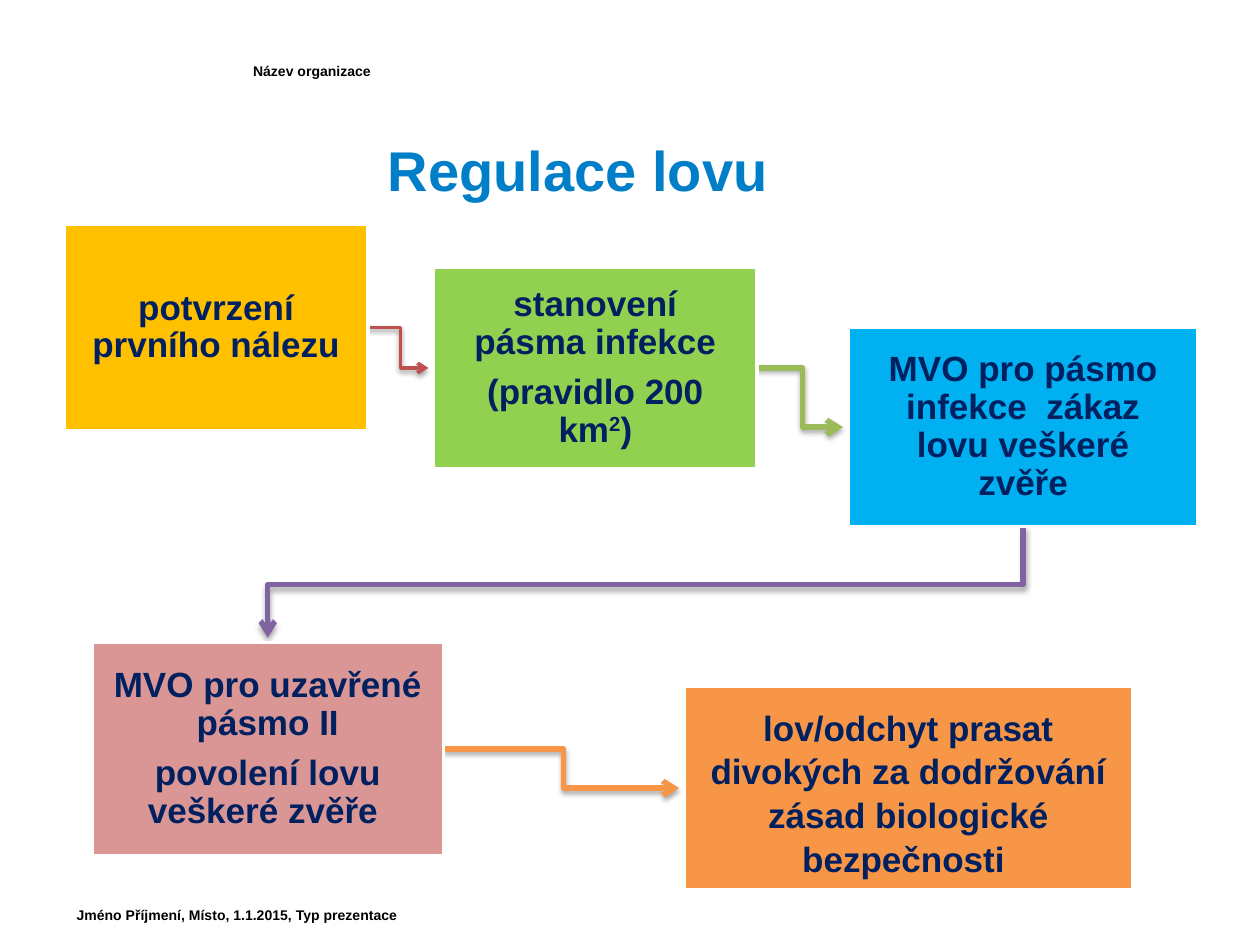
from dataclasses import dataclass
from lxml import etree
from pptx import Presentation
from pptx import util as u
from pptx.dml.color import RGBColor
from pptx.enum import shapes, text
from pptx.oxml.ns import qn


@dataclass(frozen=True)
class Theme:
    font: str = "Arial"
    black: str = "000000"
    white: str = "FFFFFF"
    blue: str = "007EC7"
    navy: str = "002060"
    small: int = 8
    body: int = 20
    large: int = 32


@dataclass(frozen=True)
class Label:
    words: str
    left: float
    top: float
    width: float
    height: float
    size: int
    color: str
    indent: float = 0


@dataclass(frozen=True)
class Step:
    lines: tuple[str, ...]  # "^" stands around superscript text
    left: float
    top: float
    width: float
    height: float
    fill: str
    pad: float = 0.16
    pitch: float = 0.9
    drop: float = 0  # extra inset above the text

    @property
    def middle(self) -> tuple[float, float]:
        return self.left + self.width / 2, self.top + self.height / 2


@dataclass(frozen=True)
class Link:
    start: int
    end: int
    color: str
    weight: float = 3
    alpha: int = 35
    down: bool = False


THEME = Theme()
GAP = 0.04
SHIFT = 0.02

LABELS = (
    Label("Název organizace", 1.91, 0.44, 7.59, 0.24, THEME.small, THEME.black),
    Label("Jméno Příjmení, Místo, 1.1.2015, Typ prezentace",
          0.51, 7.14, 9, 0.24, THEME.small, THEME.black),
    Label("Regulace lovu", 0.51, 0.99, 8.99, 0.71, THEME.large, THEME.blue, 2.47),
)
STEPS = (
    Step(("potvrzení prvního nálezu",), 0.51, 1.78, 2.41, 1.64, "FFC000"),
    Step(("stanovení pásma infekce", "(pravidlo 200 km^2^)"),
         3.44, 2.12, 2.57, 1.6, "92D050"),
    Step(("MVO pro pásmo infekce  zákaz lovu veškeré zvěře",),
         6.73, 2.6, 2.78, 1.58, "00B0F0"),
    Step(("MVO pro uzavřené pásmo II", "povolení lovu veškeré zvěře "),
         0.73, 5.1, 2.79, 1.69, "D99694"),
    Step(("lov/odchyt prasat divokých za dodržování zásad biologické bezpečnosti ",),
         5.43, 5.45, 3.56, 1.61, "F79646", 0.11, 1.04, 0.06),
)
LINKS = (
    Link(0, 1, "C0504D", 2, 38),
    Link(1, 2, "9BBB59"),
    Link(2, 3, "8064A2", down=True),
    Link(3, 4, "F79646"),
)


def style(font, size: int, color: str) -> None:
    for name, value in {"name": THEME.font, "size": u.Pt(size), "bold": True}.items():
        setattr(font, name, value)
    font.color.rgb = RGBColor.from_string(color)


def place(item: Label | Step) -> list[u.Inches]:
    return [u.Inches(n) for n in (item.left, item.top, item.width, item.height)]


def add_label(slide, label: Label) -> None:
    frame = slide.shapes.add_textbox(*place(label)).text_frame
    frame.word_wrap = True
    frame.vertical_anchor = text.MSO_ANCHOR.MIDDLE
    para = frame.paragraphs[0]
    if label.indent:
        para._p.get_or_add_pPr().set("marL", str(u.Inches(label.indent)))
    run = para.add_run()
    run.text = label.words
    style(run.font, label.size, label.color)


def add_step(slide, step: Step) -> None:
    box = slide.shapes.add_shape(shapes.MSO_SHAPE.RECTANGLE, *place(step))
    box.shadow.inherit = False
    box.fill.solid()
    box.fill.fore_color.rgb = RGBColor.from_string(step.fill)
    box.line.color.rgb = RGBColor.from_string(THEME.white)
    box.line.width = u.Pt(2)
    frame = box.text_frame
    pad = u.Inches(step.pad)
    look = {"word_wrap": True, "vertical_anchor": text.MSO_ANCHOR.MIDDLE,
            "margin_left": pad, "margin_right": pad, "margin_bottom": pad,
            "margin_top": u.Inches(step.pad + step.drop)}
    for name, value in look.items():
        setattr(frame, name, value)
    for i, line in enumerate(step.lines):
        para = frame.add_paragraph() if i else frame.paragraphs[0]
        para.alignment = text.PP_ALIGN.CENTER
        para.line_spacing = step.pitch
        if i:
            para.space_before = u.Pt(7)
        for j, part in enumerate(line.split("^")):
            run = para.add_run()
            run.text = part
            style(run.font, THEME.body, THEME.navy)
            if j % 2:
                run.font._element.set("baseline", "30000")


def route(link: Link) -> list[tuple[float, float]]:
    """Points of a two-bend path from one step's side to just before the next."""
    a, b = STEPS[link.start], STEPS[link.end]
    (ax, ay), (bx, by) = a.middle, b.middle
    if link.down:
        ay, by = a.top + a.height, b.top - GAP
        mid = (ay + by) / 2 + SHIFT
        return [(ax, ay), (ax, mid), (bx, mid), (bx, by)]
    ax, bx = a.left + a.width, b.left - GAP
    mid = (ax + bx) / 2 + SHIFT
    return [(ax, ay), (mid, ay), (mid, by), (bx, by)]


def add_link(slide, link: Link) -> None:
    first, *rest = [(u.Inches(x), u.Inches(y)) for x, y in route(link)]
    pen = slide.shapes.build_freeform(*first)
    pen.add_line_segments(rest, close=False)
    path = pen.convert_to_shape()
    path.fill.background()
    path.line.color.rgb = RGBColor.from_string(link.color)
    path.line.width = u.Pt(link.weight)
    path.shadow.inherit = False
    props = path._element.spPr
    etree.SubElement(props.find(qn("a:ln")), qn("a:tailEnd"), type="arrow")
    shade = etree.SubElement(
        props.find(qn("a:effectLst")), qn("a:outerShdw"), blurRad=str(u.Pt(3.1)),
        dist=str(u.Pt(1.8)), dir="5400000", rotWithShape="0")
    tint = etree.SubElement(shade, qn("a:srgbClr"), val=THEME.black)
    etree.SubElement(tint, qn("a:alpha"), val=str(link.alpha * 1000))


def main() -> None:
    deck = Presentation()
    deck.slide_width, deck.slide_height = u.Inches(10), u.Inches(7.5)
    slide = deck.slides.add_slide(deck.slide_layouts[6])
    for label in LABELS:
        add_label(slide, label)
    for link in LINKS:
        add_link(slide, link)
    for step in STEPS:
        add_step(slide, step)
    deck.save("out.pptx")


if __name__ == "__main__":
    main()
